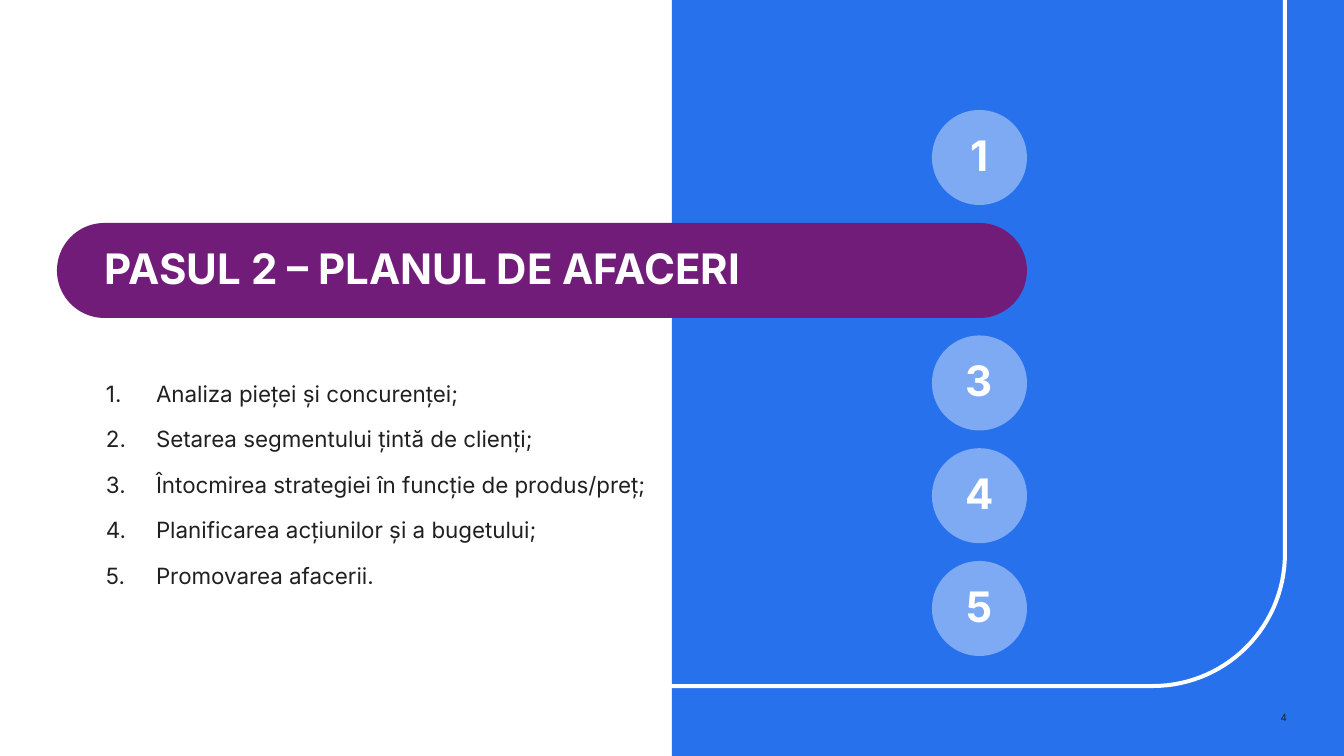
import math
from dataclasses import dataclass

import lxml.etree
import pptx
import pptx.dml.color
import pptx.enum.shapes
import pptx.enum.text
import pptx.oxml.ns
import pptx.util

SHAPE = pptx.enum.shapes.MSO_SHAPE
ALIGN = pptx.enum.text.PP_ALIGN
ANCHOR = pptx.enum.text.MSO_ANCHOR


@dataclass(frozen=True)
class Theme:
    font: str = "Inter"
    blue: str = "2871ED"
    pale: str = "7EAAF4"
    purple: str = "711C79"
    white: str = "FFFFFF"
    ink: str = "202020"
    heading: int = 30
    body: int = 16
    small: int = 7


THEME = Theme()
WIDTH, HEIGHT = 1344, 756
SCALE = 12192000 / WIDTH
STEPS = 5
CURRENT = 2
TITLE = "PASUL 2 – PLANUL DE AFACERI"
ITEMS = [
    "Analiza pieței și concurenței;",
    "Setarea segmentului țintă de clienți;",
    "Întocmirea strategiei în funcție de produs/preț;",
    "Planificarea acțiunilor și a bugetului;",
    "Promovarea afacerii.",
]


def px(n):
    return pptx.util.Emu(round(n * SCALE))


def rgb(value):
    return pptx.dml.color.RGBColor.from_string(value)


def paint(sp, fill):
    sp.shadow.inherit = False
    sp.fill.solid()
    sp.fill.fore_color.rgb = rgb(fill)
    sp.line.fill.background()
    return sp


def add_block(s, kind, box, fill):
    return paint(s.shapes.add_shape(kind, *map(px, box)), fill)


def add_box(s, box):
    return s.shapes.add_textbox(*map(px, box))


def number(p, indent):
    pPr = p._p.get_or_add_pPr()
    pPr.set("marL", str(px(indent)))
    pPr.set("indent", str(-px(indent)))
    bullet = lxml.etree.SubElement(pPr, pptx.oxml.ns.qn("a:buAutoNum"))
    bullet.set("type", "arabicPeriod")


def write(sp, *lines, size=THEME.body, color=THEME.ink, bold=False,
          align=ALIGN.LEFT, anchor=ANCHOR.TOP, spacing=1.0, after=0,
          indent=0, left=0):
    tf = sp.text_frame
    tf.word_wrap = True
    tf.vertical_anchor = anchor
    tf.margin_left = px(left)
    tf.margin_right = tf.margin_top = tf.margin_bottom = 0
    for i, line in enumerate(lines):
        p = tf.add_paragraph() if i else tf.paragraphs[0]
        if indent:
            number(p, indent)
        p.alignment = align
        p.line_spacing = spacing
        p.space_after = pptx.util.Pt(after)
        r = p.add_run()
        r.text = line
        r.font.name = THEME.font
        r.font.size = pptx.util.Pt(size)
        r.font.bold = bold
        r.font.color.rgb = rgb(color)


def add_panel(s, box):
    add_block(s, SHAPE.RECTANGLE, box, THEME.blue)


def add_frame(s, box, radius=134, stroke=4):
    x, y, w, h = box
    cx, cy = x + w - radius, y + h - radius
    angles = [math.radians(a) for a in range(0, 91, 3)]

    def side(r):
        arc = [(cx + r * math.cos(a), cy + r * math.sin(a)) for a in angles]
        return [(cx + r, y), *arc, (x, cy + r)]

    points = side(radius) + side(radius - stroke)[::-1]
    outline = [(px(a), px(b)) for a, b in points]
    builder = s.shapes.build_freeform(*outline[0])
    builder.add_line_segments(outline[1:], close=True)
    paint(builder.convert_to_shape(), THEME.white)


def add_steps(s, box):
    x, y, size, h = box
    pitch = (h - size) / (STEPS - 1)
    for i in range(STEPS):
        if i + 1 == CURRENT:
            continue
        sp = add_block(s, SHAPE.OVAL, (x, y + i * pitch, size, size), THEME.pale)
        write(sp, str(i + 1), size=THEME.heading, color=THEME.white, bold=True,
              align=ALIGN.CENTER, anchor=ANCHOR.MIDDLE, spacing=0.92)


def add_banner(s, box):
    sp = add_block(s, SHAPE.ROUNDED_RECTANGLE, box, THEME.purple)
    sp.adjustments[0] = 0.5
    write(sp, TITLE, size=THEME.heading, color=THEME.white, bold=True,
          anchor=ANCHOR.MIDDLE, spacing=0.92, left=34)


def add_list(s, box):
    write(add_box(s, box), *ITEMS, spacing=1.07, after=12, indent=50)


def add_page_number(s, box):
    write(add_box(s, box), "4", size=THEME.small, align=ALIGN.RIGHT)


def main():
    prs = pptx.Presentation()
    prs.slide_width, prs.slide_height = px(WIDTH), px(HEIGHT)
    s = prs.slides.add_slide(prs.slide_layouts[6])
    add_panel(s, (WIDTH // 2, 0, WIDTH // 2, HEIGHT))
    add_page_number(s, (1246, 712, 41, 14))
    add_frame(s, (0, 0, 1287, 688))
    add_steps(s, (932, 110, 95, 546))
    add_banner(s, (57, 223, 970, 95))
    add_list(s, (106, 378, 592, 259))
    prs.save("out.pptx")


if __name__ == "__main__":
    main()
